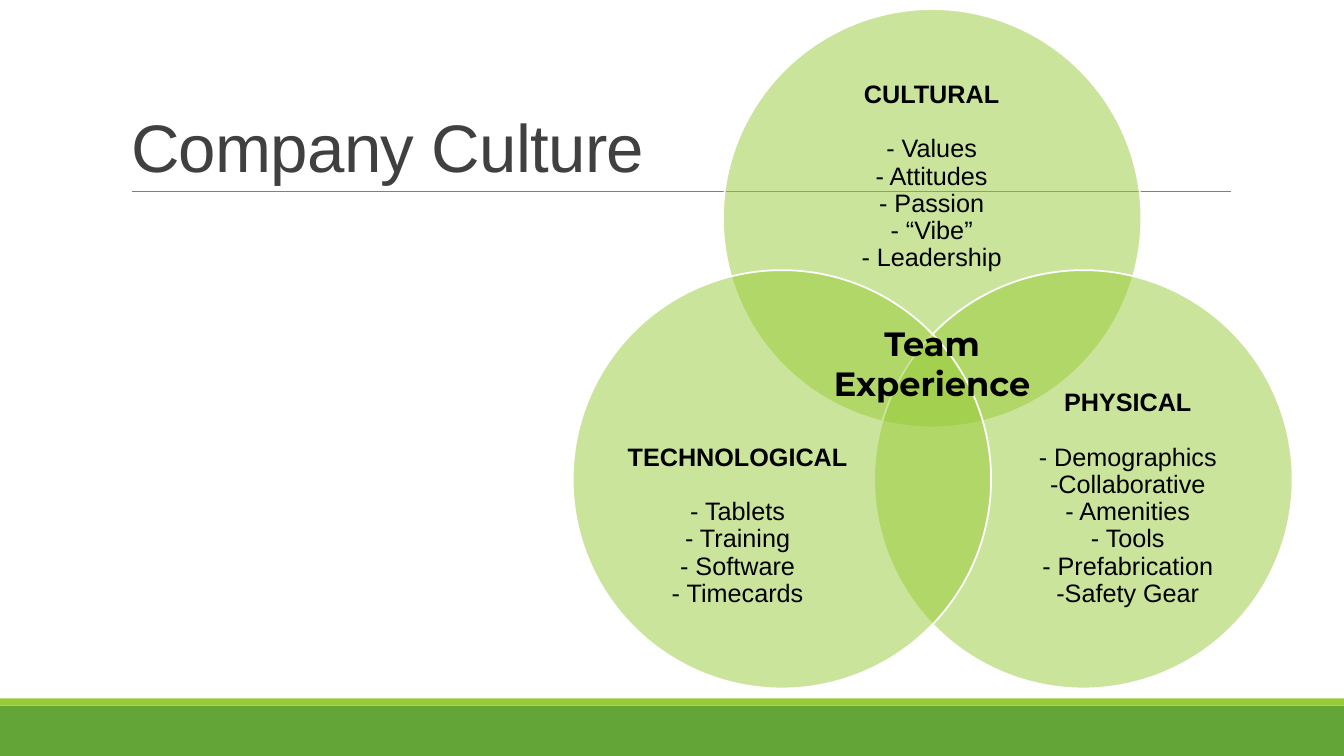
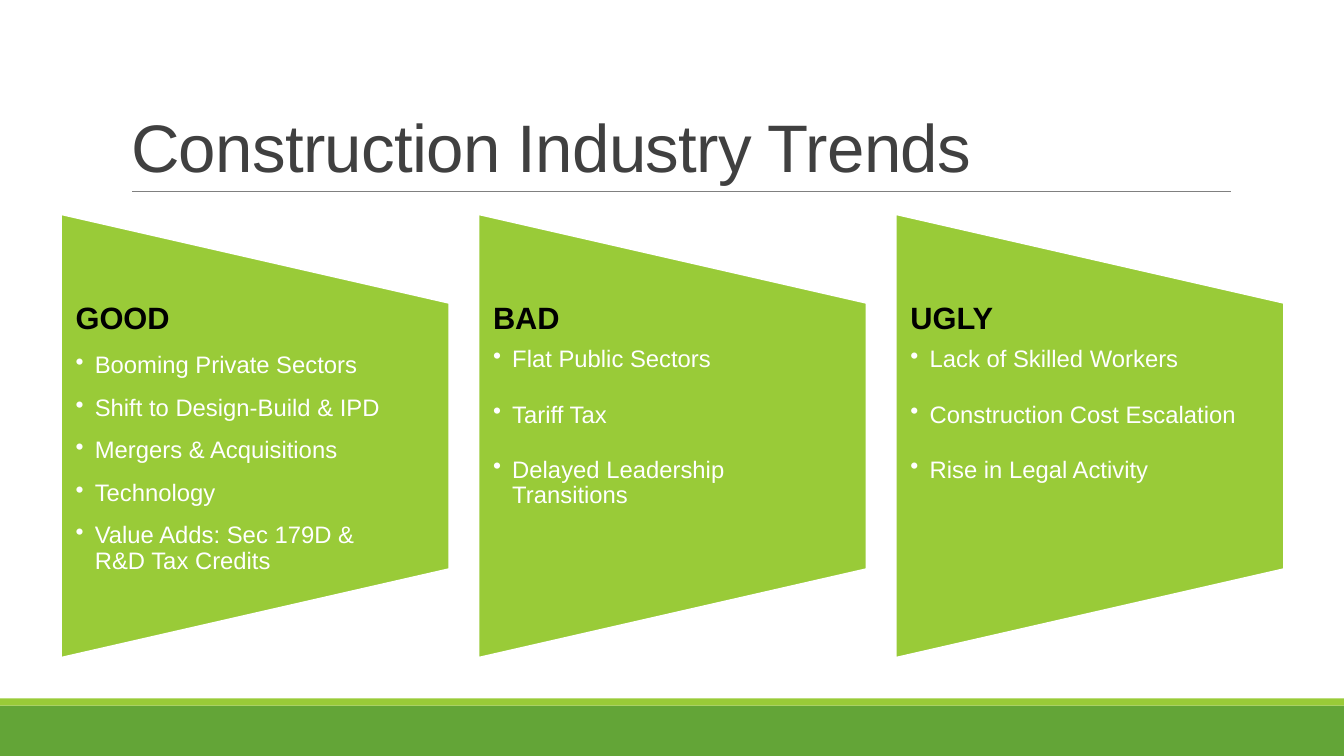
from dataclasses import dataclass
from lxml import etree
from pptx import Presentation
from pptx import util as u
from pptx.dml.color import RGBColor
from pptx.enum import shapes, text
from pptx.oxml import ns

Inches, Pt = u.Inches, u.Pt


@dataclass(frozen=True)
class Theme:
    green: str = "63A537"
    lime: str = "99CB38"
    rule: str = "808080"
    heading: str = "404040"
    ink: str = "000000"
    white: str = "FFFFFF"
    font: str = "Arial"
    accent_font: str = "Montserrat"
    title: int = 48
    center: int = 24
    column: int = 22
    circle: int = 18
    bullet: int = 17


T = Theme()


def write(tf, lines, frame, para):
    """Fill a text frame with (text, size, colour, bold, space after, bulleted) lines."""
    for name, value in frame.items():
        setattr(tf, name, value)
    for i, (words, size, color, bold, after, bulleted) in enumerate(lines):
        p = tf.paragraphs[0] if i == 0 else tf.add_paragraph()
        p.text = words
        for name, value in {"space_before": Pt(0), "space_after": Pt(after),
                            "alignment": text.PP_ALIGN.LEFT, **para}.items():
            setattr(p, name, value)
        if bulleted:
            pPr = p._p.get_or_add_pPr()
            pPr.set("marL", str(Inches(0.19)))
            pPr.set("indent", str(-Inches(0.19)))
            etree.SubElement(pPr, ns.qn("a:buChar")).set("char", "•")
        for r in p.runs:
            for name, value in {"name": T.font, "size": Pt(size), "bold": bold}.items():
                setattr(r.font, name, value)
            r.font.color.rgb = RGBColor.from_string(color)


def add_shape(s, kind, box, fill, line=None):
    sp = s.shapes.add_shape(kind, *map(Inches, box))
    sp.shadow.inherit = False
    sp.fill.solid()
    sp.fill.fore_color.rgb = RGBColor.from_string(fill)
    if line:
        sp.line.color.rgb = RGBColor.from_string(line)
        sp.line.width = Pt(1.25)
    else:
        sp.line.fill.background()
    return sp


prs = Presentation()
prs.slide_width, prs.slide_height = Inches(13.33), Inches(7.5)
layout = prs.slide_layouts[5]

# Slides and their titles
title_box = {"left": 1.2, "top": 0.31, "width": 11, "height": 1.59}
for name, value in title_box.items():
    setattr(layout.placeholders[0], name, Inches(value))
for title in ("Company Culture", "Construction Industry Trends"):
    s = prs.slides.add_slide(layout)
    tf = s.shapes.title.text_frame
    write(tf, [(title, T.title, T.heading, False, 0, False)],
          {"vertical_anchor": text.MSO_ANCHOR.BOTTOM, "auto_size": text.MSO_AUTO_SIZE.NONE},
          {"line_spacing": 0.85})
    tf.paragraphs[0].runs[0].font._element.set("spc", "-50")
culture, trends = prs.slides

# Bands and title rule, moved to the shared layout
RECT = shapes.MSO_SHAPE.RECTANGLE
bands = [add_shape(culture, RECT, (0, 7, 13.33, 0.5), T.green),
         add_shape(culture, RECT, (0, 6.93, 13.33, 0.07), T.lime)]
rule = culture.shapes.add_connector(shapes.MSO_CONNECTOR.STRAIGHT, Inches(1.31),
                                    Inches(1.9), Inches(12.21), Inches(1.9))
rule.line.color.rgb = RGBColor.from_string(T.rule)
rule.line.width = Pt(0.5)
etree.SubElement(rule.element.spPr, ns.qn("a:effectLst"))
for sp in (*bands, rule):
    layout.shapes.element.append(sp.element)

# Venn diagram: circle corner, text box, heading, items
TOP, BOTTOM = text.MSO_ANCHOR.TOP, text.MSO_ANCHOR.BOTTOM
circles = [
    ((7.17, 0.09), (7.72, 0.81, 3.04, 1.87), TOP, "CULTURAL",
     ["- Values", "- Attitudes", "- Passion", "- “Vibe”", "- Leadership"]),
    ((8.67, 2.68), (9.94, 3.75, 2.49, 2.28), BOTTOM, "PHYSICAL",
     ["- Demographics", "-Collaborative", "- Amenities", "- Tools",
      "- Prefabrication", "-Safety Gear"]),
    ((5.68, 2.68), (6.07, 3.75, 2.49, 2.28), BOTTOM, "TECHNOLOGICAL",
     ["- Tablets", "- Training", "- Software", "- Timecards"]),
]
no_margins = dict.fromkeys(("margin_left", "margin_top", "margin_right", "margin_bottom"), 0)
for corner, box, anchor, heading, items in circles:
    sp = add_shape(culture, shapes.MSO_SHAPE.OVAL, (*corner, 4.15, 4.15), T.lime, T.white)
    fill_color = sp.element.spPr.find(ns.qn("a:solidFill"))[0]
    etree.SubElement(fill_color, ns.qn("a:alpha")).set("val", "50000")
    tf = culture.shapes.add_textbox(*map(Inches, box)).text_frame
    lines = [(heading, T.circle, T.ink, True, 19.5, False)]
    lines += [(item, T.circle, T.ink, False, 0, False) for item in items]
    write(tf, lines, {"word_wrap": True, "vertical_anchor": anchor, **no_margins},
          {"alignment": text.PP_ALIGN.CENTER, "line_spacing": 0.9})

# Centre of the diagram
tf = culture.shapes.add_textbox(*map(Inches, (8.08, 3.15, 2.33, 0.91))).text_frame
write(tf, [(word, T.center, T.ink, True, 0, False) for word in ("Team", "Experience")],
      {"word_wrap": True}, {"alignment": text.PP_ALIGN.CENTER})
for p in tf.paragraphs:
    p.runs[0].font.name = T.accent_font

# Trend columns: heading, space after heading, space after bullets, bullets
columns = [
    ("GOOD", 12, 12, ["Booming Private Sectors", "Shift to Design-Build & IPD",
                      "Mergers & Acquisitions", "Technology",
                      "Value Adds: Sec 179D &\vR&D Tax Credits"]),
    ("BAD", 7.7, 21, ["Flat Public Sectors", "Tariff Tax",
                      "Delayed Leadership\vTransitions"]),
    ("UGLY", 7.7, 21, ["Lack of Skilled Workers", "Construction Cost Escalation",
                       "Rise in Legal Activity"]),
]
for i, (heading, heading_gap, gap, items) in enumerate(columns):
    x = 4.14 * i
    sp = add_shape(trends, shapes.MSO_SHAPE.FLOWCHART_MANUAL_OPERATION,
                   (0.33 + x, 2.4, 4.4, 3.85), T.lime, T.white)
    sp.rotation = 270
    tf = trends.shapes.add_textbox(*map(Inches, (0.6 + x, 3.01, 3.85, 2.64))).text_frame
    lines = [(heading, T.column, T.ink, True, heading_gap, False)]
    lines += [(item, T.bullet, T.white, False, gap, True) for item in items]
    write(tf, lines, {"word_wrap": True, **no_margins, "margin_left": Inches(0.15),
                      "margin_right": Inches(0.15)}, {"line_spacing": 0.9})

prs.save("out.pptx")
